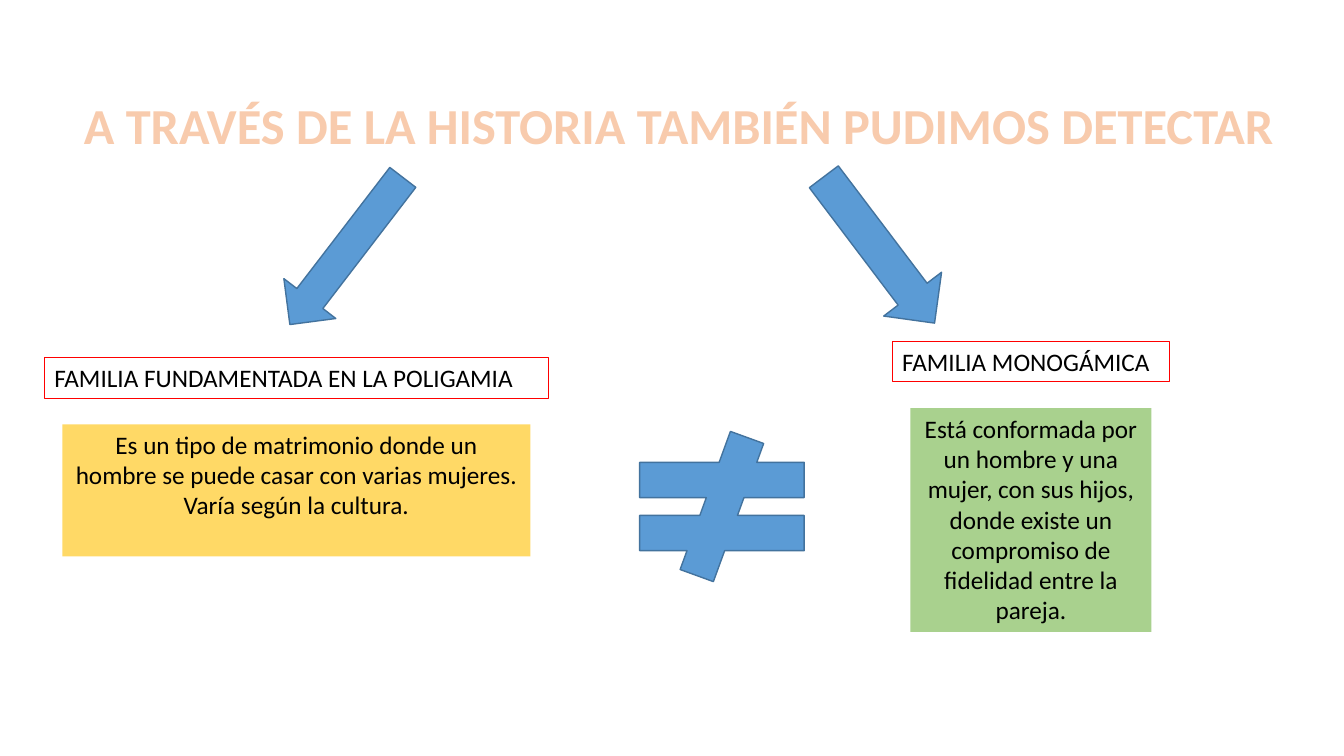
from lxml import etree
from pptx import Presentation
from pptx.dml.color import RGBColor
from pptx.enum.shapes import MSO_SHAPE as SHAPE
from pptx.enum.text import MSO_ANCHOR as ANCHOR, MSO_AUTO_SIZE as AUTO, PP_ALIGN as ALIGN
from pptx.oxml import parse_xml
from pptx.oxml.ns import nsdecls
from pptx.util import Inches, Pt

FONT = "Calibri"
BLUE, BLUE_EDGE = "5B9BD5", "43739E"
RED, BLACK = "FF0000", "000000"
YELLOW, GREEN = "FFD966", "A9D18E"
PEACH, ORANGE = "F8CBAD", "ED7D31"


def rgb(value):
    return RGBColor.from_string(value)


def write(tf, lines, size, color, align, bold=False):
    tf.text = "\n".join(lines)
    for p in tf.paragraphs:
        p.alignment = align
        for r in p.runs:
            r.font.name = FONT
            r.font.size = Pt(size)
            r.font.bold = bold
            r.font.color.rgb = rgb(color)


def add_shape(slide, kind, box, fill=None, line=None, width=1, rotation=0):
    sp = slide.shapes.add_shape(kind, *map(Inches, box))
    sp.shadow.inherit = False
    sp.rotation = rotation
    if fill:
        sp.fill.solid()
        sp.fill.fore_color.rgb = rgb(fill)
    else:
        sp.fill.background()
    if line:
        sp.line.color.rgb = rgb(line)
        sp.line.width = Pt(width)
    else:
        sp.line.fill.background()
    return sp


def add_title(slide, box, text):
    tf = slide.shapes.add_textbox(*map(Inches, box)).text_frame
    write(tf, [text], 36, PEACH, ALIGN.CENTER, bold=True)
    tf.word_wrap = False
    tf.auto_size = AUTO.SHAPE_TO_FIT_TEXT
    outline = parse_xml(f'<a:ln {nsdecls("a")} w="{Pt(1.75)}"/>')
    fill = etree.SubElement(outline, outline.tag.replace("}ln", "}solidFill"))
    etree.SubElement(fill, outline.tag.replace("}ln", "}srgbClr"), val=ORANGE)
    tf.paragraphs[0].runs[0].font._element.insert(0, outline)


def add_text_box(slide, box, lines, align, **style):
    tf = add_shape(slide, SHAPE.RECTANGLE, box, **style).text_frame
    tf.word_wrap = True
    tf.vertical_anchor = ANCHOR.TOP
    write(tf, lines, 18, BLACK, align)


def add_family(slide, box, heading, lines, fill, body_height):
    left, top, width, height = box
    inset, drop = 0.18, 0.3
    add_text_box(slide, box, [heading], ALIGN.LEFT, line=RED, width=0.75)
    body = (left + inset, top + height + drop - 0.04, width - 2 * inset, body_height)
    add_text_box(slide, body, lines, ALIGN.CENTER, fill=fill)


def add_symbols(slide):
    for kind, box, rotation in (
        (SHAPE.DOWN_ARROW, (3.11, 1.57, 0.65, 1.84), 37.5),
        (SHAPE.DOWN_ARROW, (8.36, 1.57, 0.72, 1.82), 322.9),
        (SHAPE.MATH_NOT_EQUAL, (6.05, 4.28, 2.22, 1.49), 0),
    ):
        add_shape(slide, kind, box, BLUE, BLUE_EDGE, rotation=rotation)


def main():
    prs = Presentation()
    prs.slide_width, prs.slide_height = Inches(13.33), Inches(7.5)
    s = prs.slides.add_slide(prs.slide_layouts[6])
    add_title(s, (0.67, 0.88, 12.13, 0.71),
              "A TRAVÉS DE LA HISTORIA TAMBIÉN PUDIMOS DETECTAR")
    add_family(s, (0.44, 3.55, 5, 0.4), "FAMILIA FUNDAMENTADA EN LA POLIGAMIA",
               ["Es un tipo de matrimonio donde un hombre se puede casar con varias mujeres.",
                "Varía según la cultura."], YELLOW, 1.31)
    add_family(s, (8.85, 3.39, 2.75, 0.4), "FAMILIA MONOGÁMICA",
               ["Está conformada por un hombre y una mujer, con sus hijos, donde existe "
                "un compromiso de fidelidad entre la pareja."], GREEN, 2.22)
    add_symbols(s)
    prs.save("out.pptx")


if __name__ == "__main__":
    main()
